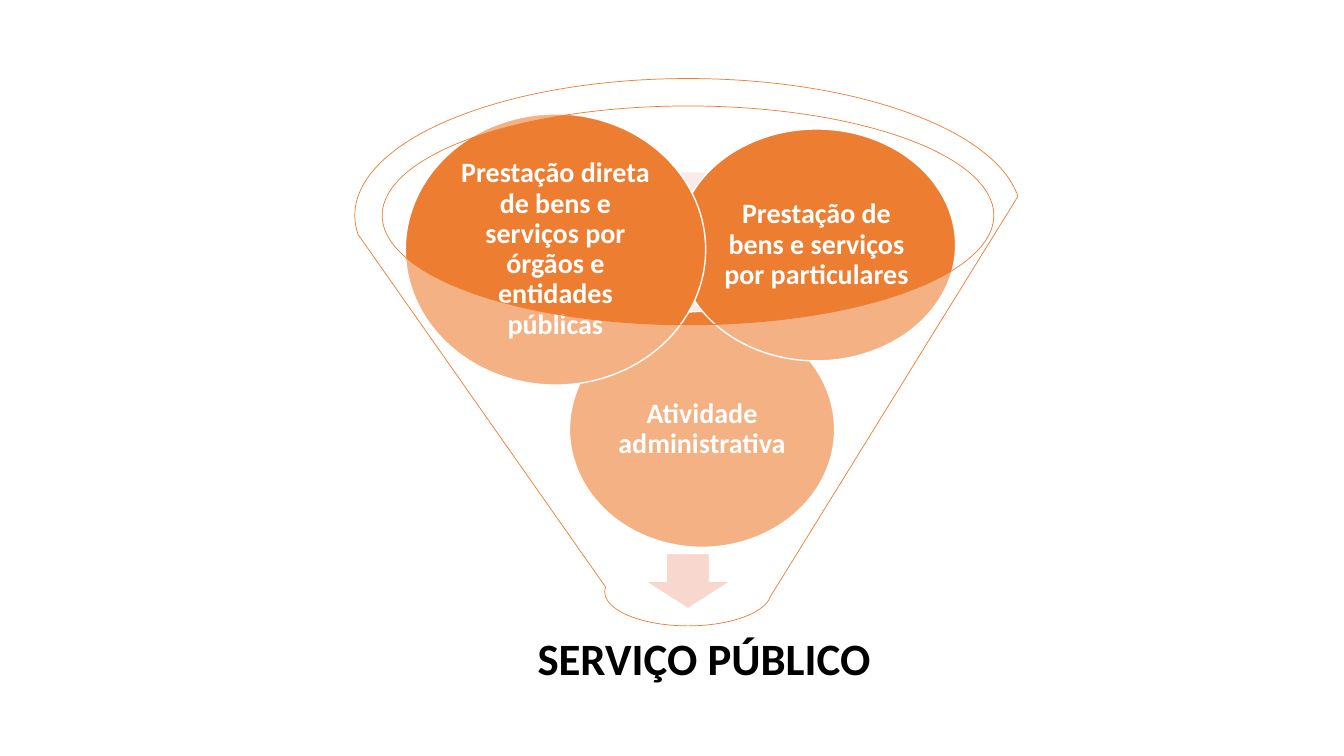
"""Build a funnel slide that gathers three activities into the public service."""
from dataclasses import dataclass

from lxml.etree import SubElement
from pptx import Presentation
from pptx.dml.color import RGBColor
from pptx.enum.shapes import MSO_SHAPE
from pptx.enum.text import MSO_ANCHOR, MSO_AUTO_SIZE, PP_ALIGN
from pptx.oxml.ns import qn
from pptx.util import Inches, Pt


@dataclass(frozen=True)
class Theme:
    font: str = "Calibri"
    orange: str = "ED7D31"
    rim: str = "F6CCBE"
    arrow: str = "F4BFAE"
    white: str = "FFFFFF"
    black: str = "000000"
    title_size: int = 32
    label_size: int = 20
    alpha: int = 40
    thin: float = 0.5
    outline: float = 1


THEME = Theme()
AXIS = 51.19

# Each place: centre x, centre y, width, height, in percent of the slide.
TITLE = ("SERVIÇO PÚBLICO", (52.39, 87.4, 30.98, 11.07))
RIM = (AXIS, 33.07, 33.3, 20.53)
ARROW = (AXIS, 76.87, 6.45, 7.33)
FUNNEL = (AXIS, 46.6, 49.58, 72.4)
BALLS = [
    ("Atividade administrativa", (52.24, 56.8, 19.73, 31.2)),
    ("Prestação de bens e serviços por particulares", (60.75, 32.4, 20.7, 30.67)),
    ("Prestação direta de bens e serviços por órgãos e entidades públicas",
     (41.33, 33, 22.35, 35.87)),
]


def set_all(obj, values):
    for name, value in values.items():
        setattr(obj, name, value)


def box(prs, place):
    cx, cy, w, h = place
    sw, sh = prs.slide_width / 100, prs.slide_height / 100
    return [int(v) for v in ((cx - w / 2) * sw, (cy - h / 2) * sh, w * sw, h * sh)]


def add_shape(prs, s, kind, place, fill, alpha=None, line=None, width=THEME.outline):
    sp = s.shapes.add_shape(kind, *box(prs, place))
    sp.shadow.inherit = False
    sp.fill.solid()
    sp.fill.fore_color.rgb = RGBColor.from_string(fill)
    if alpha:
        color = sp.fill._xPr.find(qn("a:solidFill"))[0]
        SubElement(color, qn("a:alpha")).set("val", str(alpha * 1000))
    if line:
        sp.line.color.rgb = RGBColor.from_string(line)
        sp.line.width = Pt(width)
    else:
        sp.line.fill.background()
    return sp


def write(sp, text, size, color, inset):
    tf = sp.text_frame
    margins = {f"margin_{side}": Inches(inset) for side in ("left", "top", "right", "bottom")}
    set_all(tf, {"word_wrap": True, "auto_size": MSO_AUTO_SIZE.NONE,
                 "vertical_anchor": MSO_ANCHOR.MIDDLE, **margins})
    p = tf.paragraphs[0]
    set_all(p, {"alignment": PP_ALIGN.CENTER, "line_spacing": 0.9})
    r = p.add_run()
    r.text = text
    set_all(r.font, {"name": THEME.font, "size": Pt(size), "bold": True})
    r.font.color.rgb = RGBColor.from_string(color)


def main():
    prs = Presentation()
    set_all(prs, {"slide_width": Inches(13.33), "slide_height": Inches(7.5)})
    s = prs.slides.add_slide(prs.slide_layouts[5])

    text, place = TITLE
    title = s.shapes.title
    set_all(title, dict(zip(("left", "top", "width", "height"), box(prs, place))))
    write(title, text, THEME.title_size, THEME.black, 0.09)

    add_shape(prs, s, MSO_SHAPE.OVAL, RIM, THEME.rim, THEME.alpha)
    add_shape(prs, s, MSO_SHAPE.DOWN_ARROW, ARROW, THEME.arrow, line=THEME.white)
    for text, place in BALLS:
        sp = add_shape(prs, s, MSO_SHAPE.OVAL, place, THEME.orange, line=THEME.white)
        write(sp, text, THEME.label_size, THEME.white, 0.03)
    add_shape(prs, s, MSO_SHAPE.FUNNEL, FUNNEL, THEME.white, THEME.alpha,
              THEME.orange, THEME.thin)

    prs.save("out.pptx")


if __name__ == "__main__":
    main()
